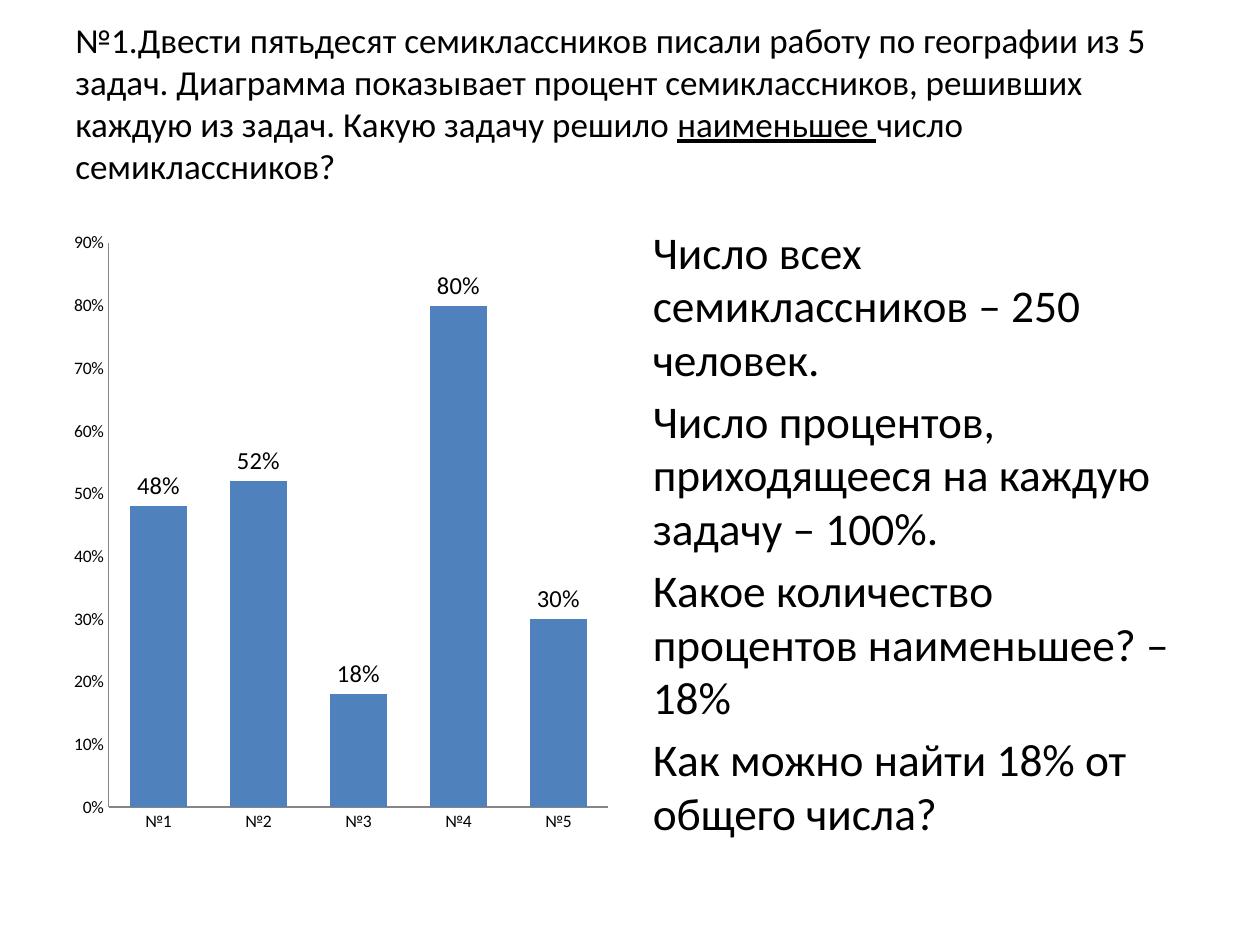
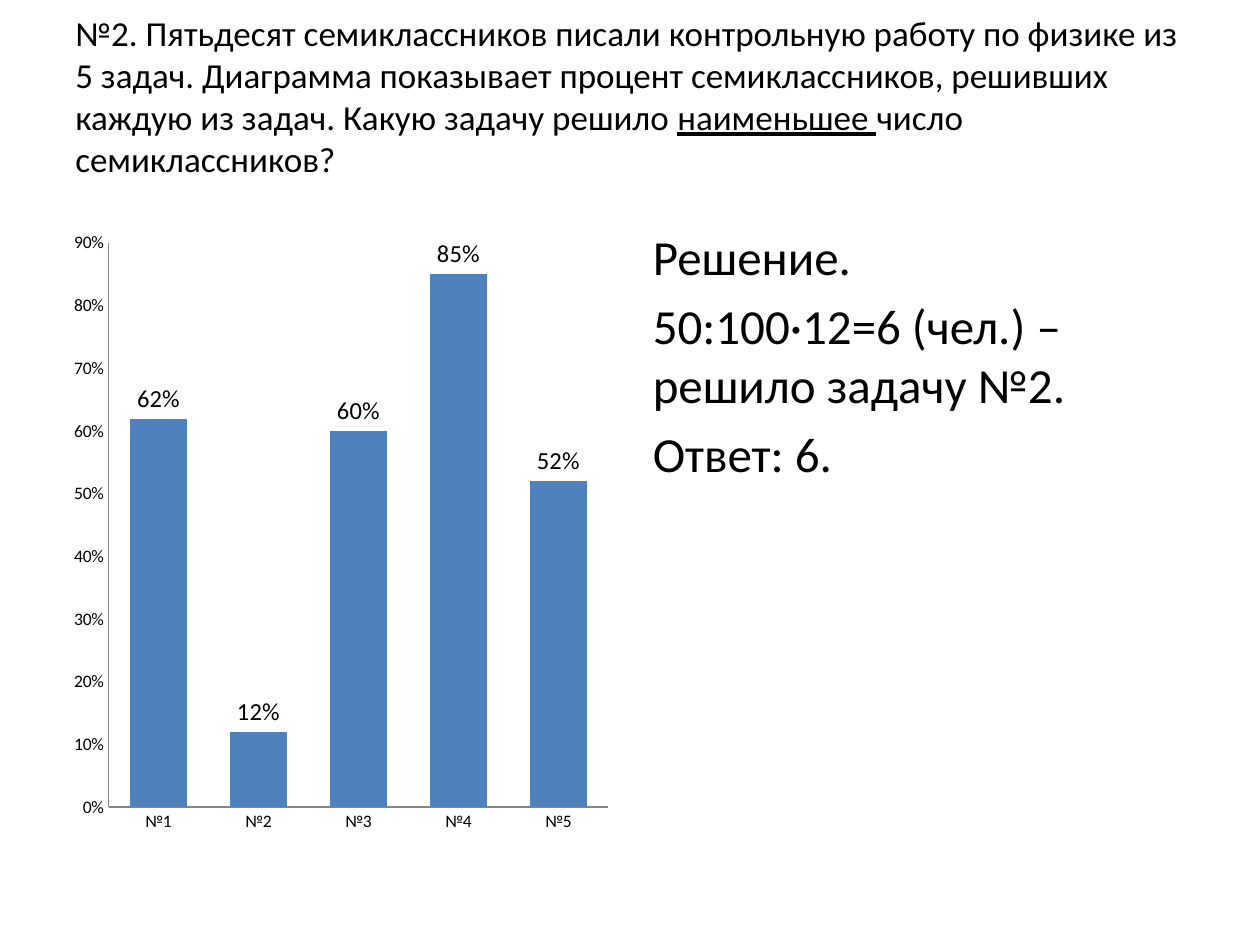
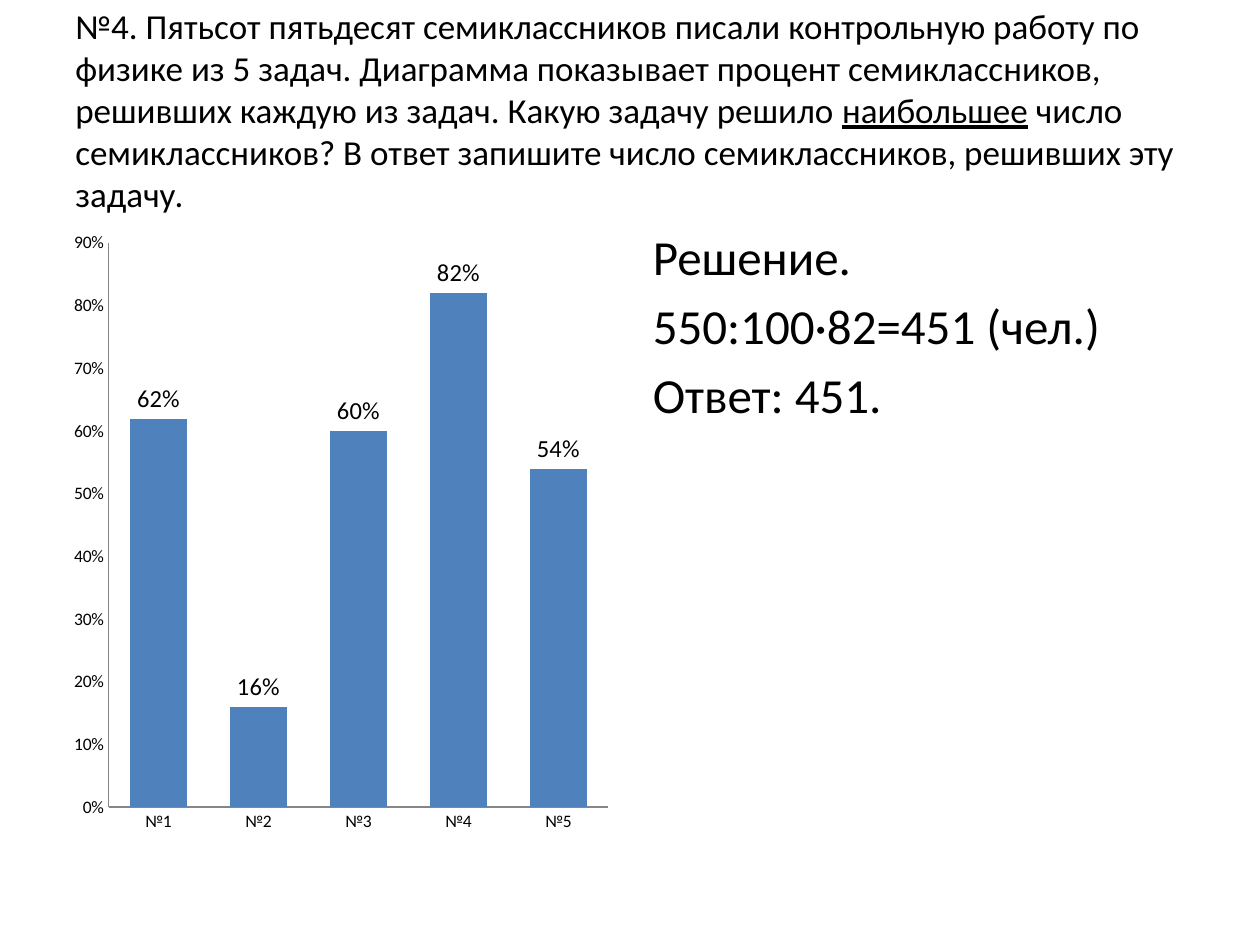
"""Build three slides of percentage problems, each with a column chart and a solution."""
from pptx import Presentation
from pptx.chart.data import CategoryChartData
from pptx.dml.color import RGBColor
from pptx.enum.chart import XL_CHART_TYPE, XL_LABEL_POSITION, XL_TICK_MARK
from pptx.enum.text import MSO_ANCHOR
from pptx.util import Cm, Pt

FONT = "Calibri"
BLACK, BLUE, GRAY = "000000", "4F81BD", "868686"
LEFT, TOP, COLUMN_W, COLUMN_H = 1.27, 4.45, 11.22, 12.57
SOLUTION_LEFT = 12.91
TITLE_W, TITLE_H = 22.86, 4.9
TASKS = [f"№{n}" for n in range(1, 6)]

SLIDES = [
    {
        "title": ("№1.Двести пятьдесят семиклассников писали работу по географии из 5 задач. "
                  "Диаграмма показывает процент семиклассников, решивших каждую из задач. "
                  "Какую задачу решило ", "наименьшее ", "число семиклассников?"),
        "title_top": 0.37,
        "solution": ["Число всех семиклассников – 250 человек.",
                     "Число процентов, приходящееся на каждую задачу – 100%.",
                     "Какое количество процентов наименьшее? – 18%",
                     "Как можно найти 18% от общего числа?"],
        "size": 25.9,
        "spacing": 0.98,
        "values": [0.48, 0.52, 0.18, 0.8, 0.3],
    },
    {
        "title": ("№2. Пятьдесят семиклассников писали контрольную работу по физике из 5 задач. "
                  "Диаграмма показывает процент семиклассников, решивших каждую из задач. "
                  "Какую задачу решило ", "наименьшее ", "число семиклассников?"),
        "title_top": 0.23,
        "solution": ["Решение.", "50:100·12=6 (чел.) – решило задачу №2.", "Ответ: 6."],
        "size": 28,
        "spacing": 1.0,
        "values": [0.62, 0.12, 0.6, 0.85, 0.52],
    },
    {
        "title": ("№4. Пятьсот пятьдесят семиклассников писали контрольную работу по физике из 5 задач. "
                  "Диаграмма показывает процент семиклассников, решивших каждую из задач. "
                  "Какую задачу решило ", "наибольшее",
                  " число семиклассников? В ответ запишите число семиклассников, решивших эту задачу."),
        "title_top": 0.09,
        "solution": ["Решение.", "550:100·82=451 (чел.)", "Ответ: 451."],
        "size": 28,
        "spacing": 1.0,
        "values": [0.62, 0.16, 0.6, 0.82, 0.54],
    },
]


def rgb(color):
    return RGBColor.from_string(color)


def set_font(font, size):
    font.name = FONT
    font.size = Pt(size)
    font.color.rgb = rgb(BLACK)


prs = Presentation()
prs.slide_width, prs.slide_height = Cm(25.4), Cm(19.05)

for data in SLIDES:
    s = prs.slides.add_slide(prs.slide_layouts[6])

    tf = s.shapes.add_textbox(Cm(LEFT), Cm(data["title_top"]), Cm(TITLE_W), Cm(TITLE_H)).text_frame
    tf.word_wrap = True
    tf.vertical_anchor = MSO_ANCHOR.TOP
    tf.margin_top = 0
    p = tf.paragraphs[0]
    set_font(p.font, 20)
    for i, text in enumerate(data["title"]):
        r = p.add_run()
        r.text = text
        if i == 1:
            r.font.underline = True

    tf = s.shapes.add_textbox(Cm(SOLUTION_LEFT), Cm(TOP), Cm(COLUMN_W), Cm(COLUMN_H)).text_frame
    tf.word_wrap = True
    for i, text in enumerate(data["solution"]):
        p = tf.add_paragraph() if i else tf.paragraphs[0]
        p.text = text
        p.space_before = Pt(round(data["size"] * 0.2, 1))
        p.line_spacing = data["spacing"]
        set_font(p.font, data["size"])

    chart_data = CategoryChartData(number_format="0%")
    chart_data.categories = TASKS
    chart_data.add_series("Series 1", data["values"])
    chart = s.shapes.add_chart(XL_CHART_TYPE.COLUMN_CLUSTERED, Cm(LEFT), Cm(TOP),
                               Cm(COLUMN_W), Cm(COLUMN_H), chart_data).chart
    set_font(chart.font, 10)
    chart.has_legend = False
    chart.has_title = False

    for axis in (chart.category_axis, chart.value_axis):
        axis.major_tick_mark = XL_TICK_MARK.NONE
        axis.minor_tick_mark = XL_TICK_MARK.NONE
        axis.has_major_gridlines = False
        axis.format.line.color.rgb = rgb(GRAY)
        axis.format.line.width = Pt(0.75)
    axis = chart.value_axis
    axis.minimum_scale, axis.maximum_scale, axis.major_unit = 0, 0.9, 0.1
    axis.tick_labels.number_format = "0%"
    axis.tick_labels.number_format_is_linked = False

    plot = chart.plots[0]
    plot.gap_width = 75
    plot.vary_by_categories = False
    fill = plot.series[0].format.fill
    fill.solid()
    fill.fore_color.rgb = rgb(BLUE)
    plot.has_data_labels = True
    labels = plot.data_labels
    labels.show_value = True
    labels.number_format = "0%"
    labels.number_format_is_linked = False
    labels.position = XL_LABEL_POSITION.OUTSIDE_END
    set_font(labels.font, 14)

prs.save("out.pptx")
